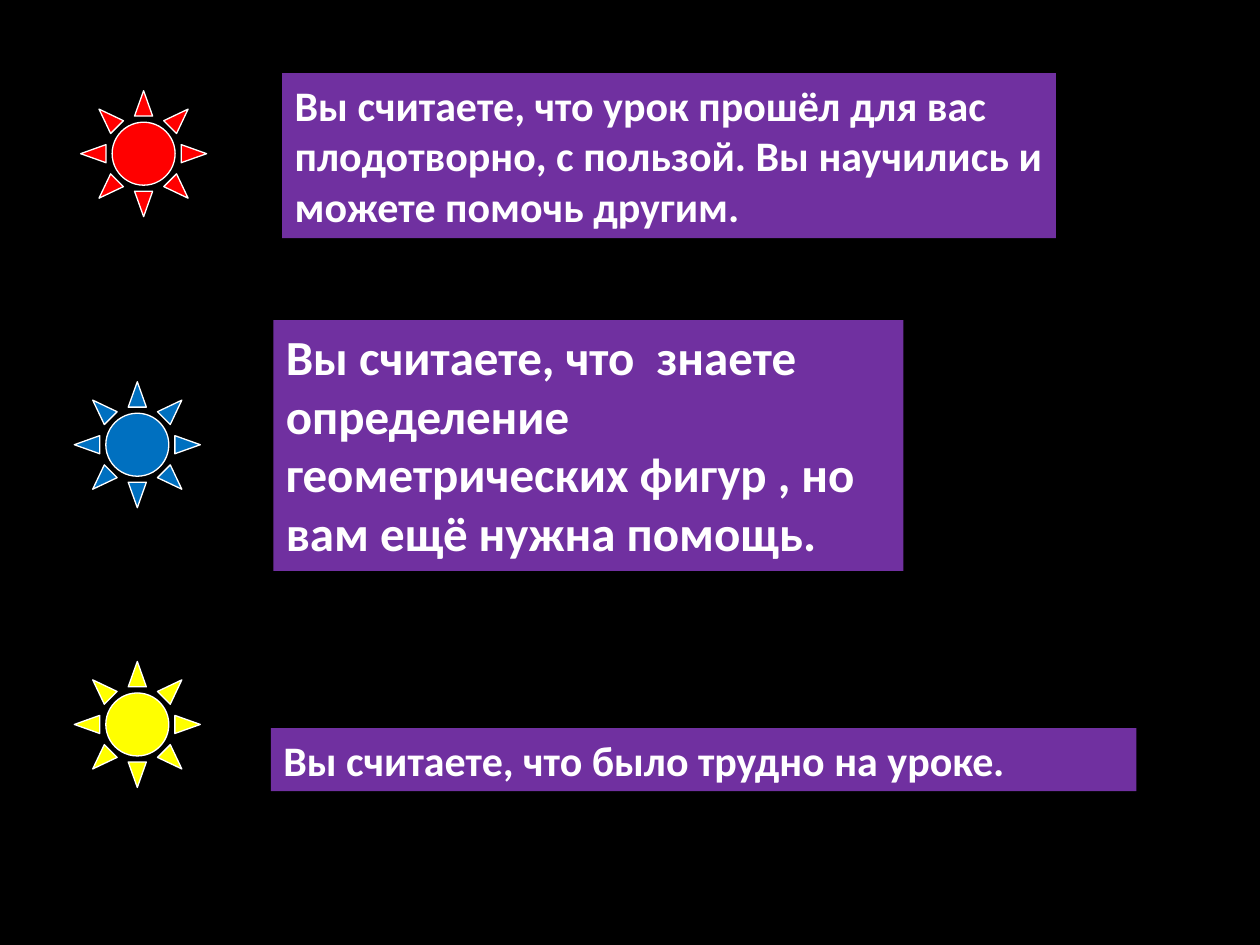
"""Build a lesson reflection slide with three coloured suns and their statements."""
import dataclasses

import pptx
import pptx.dml.color
import pptx.enum.shapes
import pptx.enum.text
import pptx.util

Pt = pptx.util.Pt


@dataclasses.dataclass(frozen=True)
class Theme:
    background: str = "000000"
    panel: str = "7030A0"
    light: str = "FFFFFF"
    red: str = "FF0000"
    blue: str = "0070C0"
    yellow: str = "FFFF00"
    font: str = "Calibri"
    statement: int = 24
    emphasis: int = 28
    sun_size: int = 72
    sun_outline: float = 0.75


THEME = Theme()

SUNS = [
    (46.08, 51.84, THEME.red),
    (42.48, 218.16, THEME.blue),
    (42.48, 378, THEME.yellow),
]

STATEMENTS = [
    ((161.28, 41.76, 442.08, 94.32), THEME.statement,
     ["Вы считаете, что урок прошёл для вас плодотворно, с пользой. "
      "Вы научились и можете помочь другим."]),
    ((156.24, 182.88, 360, 143.28), THEME.emphasis,
     ["Вы считаете, что  знаете определение геометрических фигур , "
      "но вам ещё нужна помощь."]),
    ((154.8, 416.16, 494.64, 36), THEME.statement,
     ["Вы считаете, что было трудно на уроке", "."]),
]


def paint(fill, color):
    fill.solid()
    fill.fore_color.rgb = pptx.dml.color.RGBColor.from_string(color)


def add_sun(slide, left, top, color):
    sun = slide.shapes.add_shape(
        pptx.enum.shapes.MSO_SHAPE.SUN,
        Pt(left), Pt(top), Pt(THEME.sun_size), Pt(THEME.sun_size))
    sun.shadow.inherit = False
    paint(sun.fill, color)
    paint(sun.line.fill, THEME.light)
    sun.line.width = Pt(THEME.sun_outline)


def add_statement(slide, bounds, size, parts):
    panel = slide.shapes.add_textbox(*map(Pt, bounds))
    paint(panel.fill, THEME.panel)
    frame = panel.text_frame
    frame.word_wrap = True
    frame.auto_size = pptx.enum.text.MSO_AUTO_SIZE.SHAPE_TO_FIT_TEXT
    paragraph = frame.paragraphs[0]
    for index, part in enumerate(parts):
        run = paragraph.add_run()
        run.text = part
        run.font.name = THEME.font
        run.font.size = Pt(size)
        run.font.bold = True
        run.font.italic = index > 0
        paint(run.font.fill, THEME.light)


def main():
    deck = pptx.Presentation()
    deck.slide_width, deck.slide_height = Pt(720), Pt(540)
    slide = deck.slides.add_slide(deck.slide_layouts.get_by_name("Blank"))
    paint(slide.background.fill, THEME.background)
    for sun in SUNS:
        add_sun(slide, *sun)
    for statement in STATEMENTS:
        add_statement(slide, *statement)
    deck.save("out.pptx")


if __name__ == "__main__":
    main()
